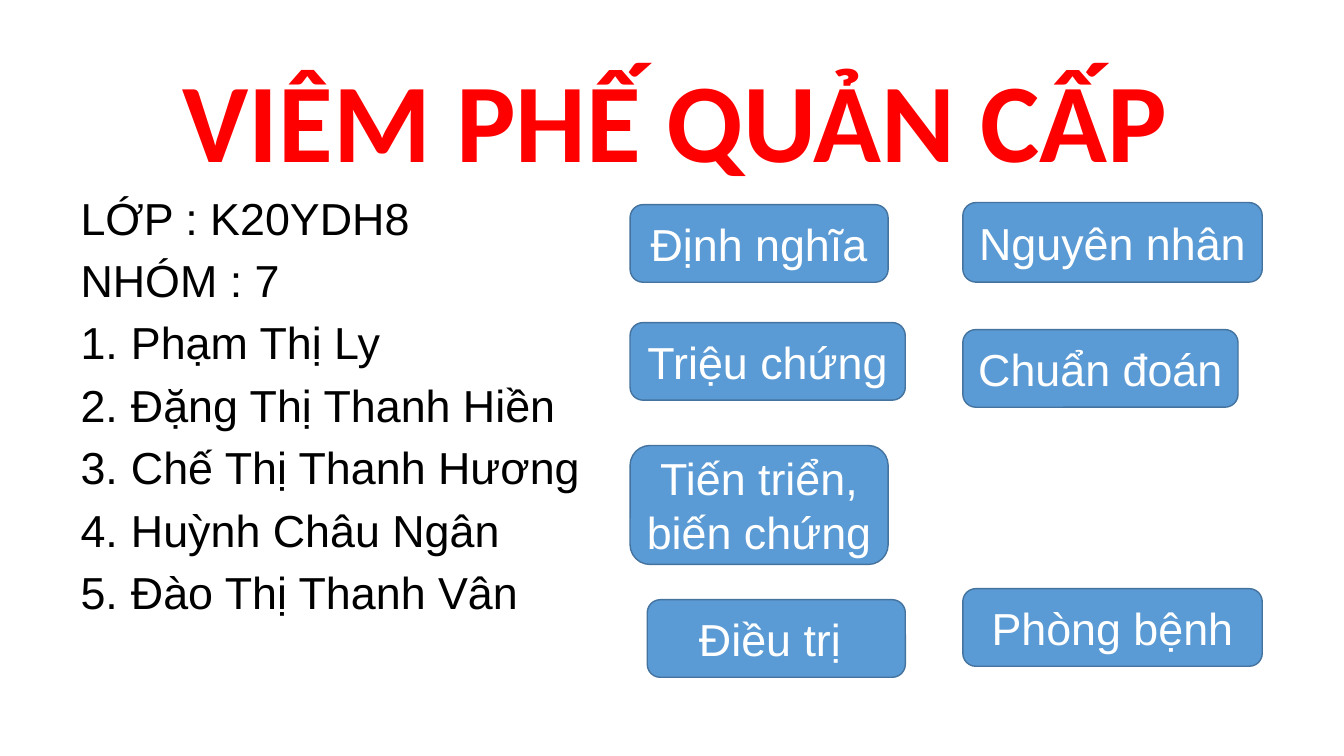
from lxml.etree import SubElement
from pptx import Presentation
from pptx.dml.color import RGBColor
from pptx.enum.shapes import MSO_SHAPE as Shape
from pptx.enum.text import MSO_ANCHOR as Anchor, MSO_AUTO_SIZE as Fit, PP_ALIGN as Align
from pptx.oxml.ns import qn
from pptx.util import Inches, Pt

RED = RGBColor(0xFF, 0x00, 0x00)
BLACK = RGBColor(0x00, 0x00, 0x00)
WHITE = RGBColor(0xFF, 0xFF, 0xFF)
BLUE = RGBColor(0x5B, 0x9B, 0xD5)
EDGE = RGBColor(0x43, 0x73, 0x9E)

# Left, top, width and height in percent of the slide
TITLE = (12.75, 2.8, 75, 22.53)
ROSTER = (5.25, 25.33, 89.95, 69.07)
LEFT, INDENT, RIGHT = 46.88, 48.16, 71.64
SLIM, MID, WIDE = 19.2, 20.48, 22.28
LOW, TALL = 10.27, 15.73

HEADS = ["LỚP : K20YDH8", "NHÓM : 7"]
NAMES = ["Phạm Thị Ly", "Đặng Thị Thanh Hiền", "Chế Thị Thanh Hương",
         "Huỳnh Châu Ngân", "Đào Thị Thanh Vân"]
TOPICS = [
    ("Định nghĩa", LEFT, 27.07, SLIM, LOW),
    ("Nguyên nhân", RIGHT, 26.8, WIDE, 10.53),
    ("Triệu chứng", LEFT, 42.67, MID, LOW),
    ("Chuẩn đoán", RIGHT, 43.6, MID, LOW),
    ("Tiến triển, biến chứng", LEFT, 58.93, SLIM, TALL),
    ("Điều trị ", INDENT, 79.33, SLIM, LOW),
    ("Phòng bệnh", RIGHT, 77.87, WIDE, LOW),
]


class Page:
    def __init__(self, deck):
        self.deck = deck
        self.slide = deck.slides.add_slide(deck.slide_layouts[5])
        self.font, self.size = "Arial", 32

    def place(self, left, top, width, height):
        """Turn percent of the slide into lengths."""
        wide, high = self.deck.slide_width, self.deck.slide_height
        return [round(share * full / 100) for share, full in
                ((left, wide), (top, high), (width, wide), (height, high))]

    def style(self, para, color, name=None, size=None, bold=False):
        font = para.font
        font.name, font.size = name or self.font, Pt(size or self.size)
        font.bold, font.color.rgb = bold, color

    def title(self, text, area):
        shape = self.slide.shapes.title
        shape.left, shape.top, shape.width, shape.height = self.place(*area)
        frame = shape.text_frame
        frame.text = text
        frame.auto_size, frame.vertical_anchor = Fit.NONE, Anchor.BOTTOM
        para = frame.paragraphs[0]
        para.alignment, para.line_spacing = Align.CENTER, 0.9
        self.style(para, RED, "Calibri", 80, True)

    def number(self, para):
        """Give the paragraph an automatic number and a hanging indent."""
        props = para._p.get_or_add_pPr()
        props.set("marL", str(Inches(0.5)))
        props.set("indent", str(Inches(-0.5)))
        SubElement(props, qn("a:buFont"), typeface="+mj-lt")
        SubElement(props, qn("a:buAutoNum"), type="arabicPeriod")

    def roster(self, heads, names, area):
        frame = self.slide.shapes.add_textbox(*self.place(*area)).text_frame
        frame.word_wrap = True
        frame.text = "\n".join(heads + names)
        for index, para in enumerate(frame.paragraphs):
            if index >= len(heads):
                self.number(para)
            para.line_spacing = 0.9
            para.space_before = Pt(10 if index else 0)
            self.style(para, BLACK)

    def button(self, text, *area):
        shape = self.slide.shapes.add_shape(Shape.ROUNDED_RECTANGLE, *self.place(*area))
        shape.shadow.inherit = False
        shape.fill.solid()
        shape.fill.fore_color.rgb = BLUE
        shape.line.color.rgb, shape.line.width = EDGE, Pt(1)
        frame = shape.text_frame
        frame.text, frame.word_wrap = text, True
        frame.vertical_anchor = Anchor.MIDDLE
        para = frame.paragraphs[0]
        para.alignment = Align.CENTER
        self.style(para, WHITE)


def main():
    deck = Presentation()
    deck.slide_width, deck.slide_height = Inches(13.33), Inches(7.5)
    page = Page(deck)
    page.title("VIÊM PHẾ QUẢN CẤP ", TITLE)
    page.roster(HEADS, NAMES, ROSTER)
    for topic in TOPICS:
        page.button(*topic)
    deck.save("out.pptx")


if __name__ == "__main__":
    main()
